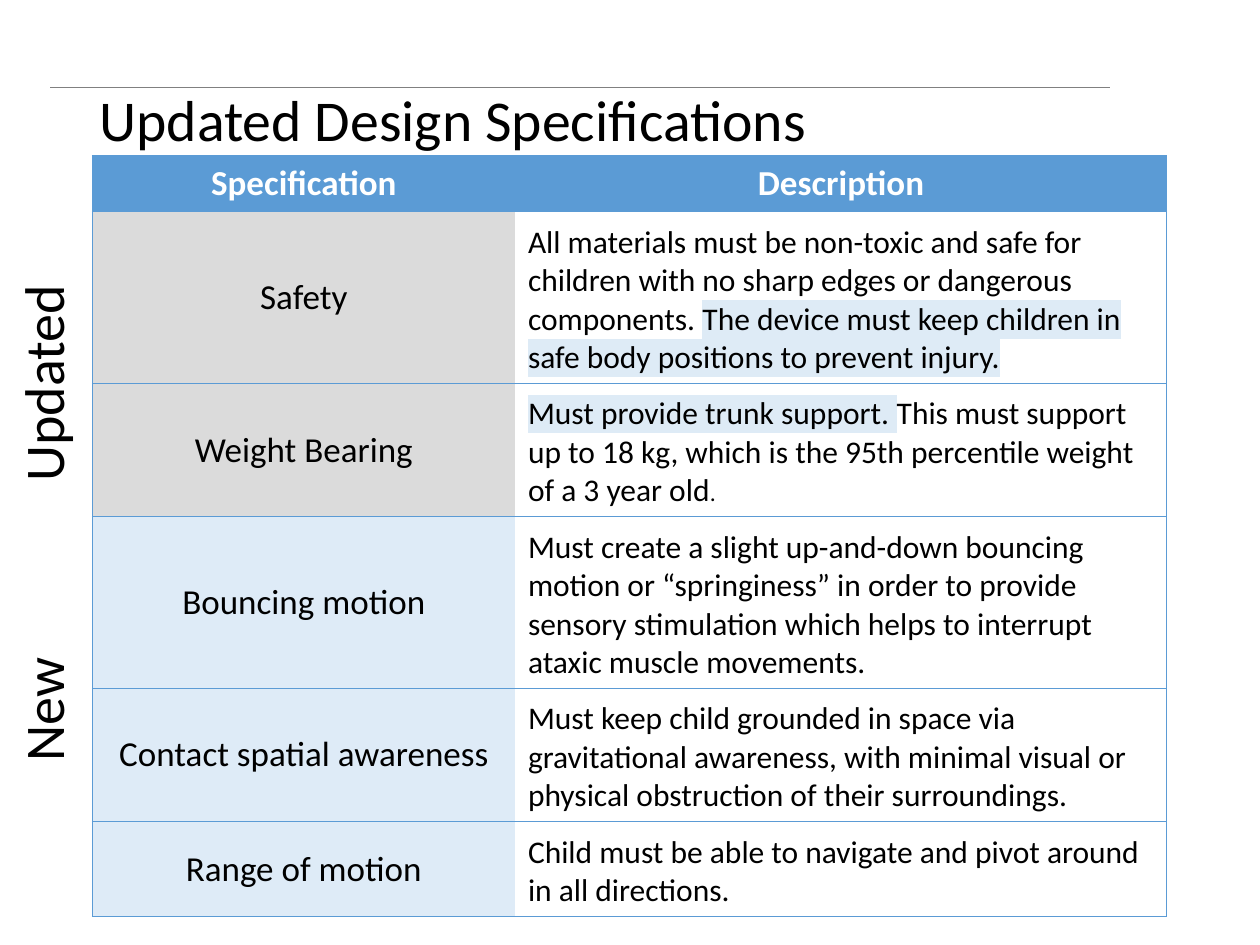
from lxml import etree
from pptx import Presentation
from pptx.dml.color import RGBColor
from pptx.enum.shapes import MSO_CONNECTOR
from pptx.enum.text import MSO_ANCHOR, MSO_AUTO_SIZE, PP_ALIGN
from pptx.oxml.ns import qn
from pptx.util import Cm, Pt

STRAIGHT = MSO_CONNECTOR.STRAIGHT
TOP, MIDDLE = MSO_ANCHOR.TOP, MSO_ANCHOR.MIDDLE
LEFT, CENTER = PP_ALIGN.LEFT, PP_ALIGN.CENTER
GROW = MSO_AUTO_SIZE.SHAPE_TO_FIT_TEXT

BLACK = RGBColor(0x00, 0x00, 0x00)
WHITE = RGBColor(0xFF, 0xFF, 0xFF)
BLUE = RGBColor(0x5B, 0x9B, 0xD5)
PALE_BLUE = RGBColor(0xDE, 0xEB, 0xF7)
HIGHLIGHT = RGBColor(0xDE, 0xEB, 0xF6)
LIGHT_GRAY = RGBColor(0xDB, 0xDB, 0xDB)
RULE_GRAY = RGBColor(0x80, 0x80, 0x80)

TITLE_FORMAT = {"name": "Calibri", "size": Pt(33), "bold": False}
SIDE_FORMAT = {"name": "Calibri", "size": Pt(32)}
HEADER_FORMAT = {"name": "Calibri", "size": Pt(20), "bold": True}
NAME_FORMAT = {"name": "Calibri", "size": Pt(20), "bold": False}
BODY_FORMAT = {"name": "Calibri", "size": Pt(18), "bold": False}
STOP_FORMAT = {**BODY_FORMAT, "size": Pt(13.5)}

# Each row: height in cm, name, name fill, description spans (text, marked, format)
SPECIFICATIONS = [
    (3.45, "Safety", LIGHT_GRAY, [
        ("All materials must be non-toxic and safe for children with no sharp "
         "edges or dangerous components. ", False, BODY_FORMAT),
        ("The device must keep children in safe body positions to prevent "
         "injury.", True, BODY_FORMAT)]),
    (2.68, "Weight Bearing", LIGHT_GRAY, [
        ("Must provide trunk support. ", True, BODY_FORMAT),
        ("This must support up to 18 kg, which is the 95th percentile weight "
         "of a 3 year old", False, BODY_FORMAT),
        (".", False, STOP_FORMAT)]),
    (3.45, "Bouncing motion", PALE_BLUE, [
        ("Must create a slight up-and-down bouncing motion or “springiness” in "
         "order to provide sensory stimulation which helps to interrupt ataxic "
         "muscle movements.", False, BODY_FORMAT)]),
    (2.68, "Contact spatial awareness", PALE_BLUE, [
        ("Must keep child grounded in space via gravitational awareness, with "
         "minimal visual or physical obstruction of their surroundings.",
         False, BODY_FORMAT)]),
    (1.89, "Range of motion", PALE_BLUE, [
        ("Child must be able to navigate and pivot around in all directions.",
         False, BODY_FORMAT)]),
]
HEADER_HEIGHT = 1.13
COLUMN_WIDTHS = (8.53, 13.13)


def add_span(para, text, values, color=BLACK, marked=False):
    span = para.add_run()
    span.text = text
    for key, value in values.items():
        setattr(span.font, key, value)
    span.font.color.rgb = color
    if marked:
        highlight = etree.Element(qn("a:highlight"))
        etree.SubElement(highlight, qn("a:srgbClr"), val=str(HIGHLIGHT))
        span.font._element.find(qn("a:solidFill")).addnext(highlight)


def set_borders(cell, sides):
    """Draw the named sides in blue and leave the others empty."""
    properties = cell._tc.get_or_add_tcPr()
    for side in "LRTB":
        line = etree.SubElement(properties, qn(f"a:ln{side}"), w=str(Pt(0.5)))
        if side in sides:
            fill = etree.SubElement(line, qn("a:solidFill"))
            etree.SubElement(fill, qn("a:srgbClr"), val=str(BLUE))
        else:
            etree.SubElement(line, qn("a:noFill"))


def fill_cell(cell, spans, fill, sides, color=BLACK, align=CENTER, anchor=MIDDLE):
    set_borders(cell, sides)
    cell.fill.solid()
    cell.fill.fore_color.rgb = fill
    cell.vertical_anchor = anchor
    para = cell.text_frame.paragraphs[0]
    para.alignment = align
    for text, marked, values in spans:
        add_span(para, text, values, color, marked)


def add_heading(page, left, top, width, height):
    # Thin rule across the top of the page
    rule = page.shapes.add_connector(
        STRAIGHT, left - Cm(0.74), top + Cm(1.11), left + Cm(20.63), top + Cm(1.11))
    rule.line.color.rgb = RULE_GRAY
    rule.line.width = Pt(0.25)
    etree.SubElement(rule._element.spPr, qn("a:effectLst"))

    title = page.shapes.title
    title.left, title.top, title.width, title.height = left, top, width, height
    title.text_frame.vertical_anchor = MIDDLE
    para = title.text_frame.paragraphs[0]
    para.alignment = LEFT
    para.line_spacing = 0.9
    add_span(para, "Updated Design Specifications", TITLE_FORMAT)


def add_specifications(page, left, top, width, height):
    frame = page.shapes.add_table(
        len(SPECIFICATIONS) + 1, len(COLUMN_WIDTHS), left, top, width, height)
    table = frame.table
    table.horz_banding = False
    for column, column_width in zip(table.columns, COLUMN_WIDTHS):
        column.width = Cm(column_width)

    # Header row
    table.rows[0].height = Cm(HEADER_HEIGHT)
    for index, (text, sides) in enumerate((("Specification", "LTB"), ("Description", "RTB"))):
        fill_cell(table.cell(0, index), [(text, False, HEADER_FORMAT)], BLUE,
                  sides, color=WHITE, anchor=TOP)

    # One row for each specification
    for index, (row_height, name, fill, spans) in enumerate(SPECIFICATIONS, 1):
        table.rows[index].height = Cm(row_height)
        fill_cell(table.cell(index, 0), [(name, False, NAME_FORMAT)], fill, "LTB")
        description = table.cell(index, 1)
        description.margin_top = Cm(0.23)
        description.margin_bottom = Cm(0.13)
        fill_cell(description, spans, WHITE, "RTB", align=LEFT, anchor=TOP)


def add_side_label(page, text, left, top, width, height):
    box = page.shapes.add_textbox(left, top, width, height)
    box.text_frame.word_wrap = True
    box.text_frame.auto_size = GROW
    box.text_frame._txBody.bodyPr.set("vert", "vert270")
    add_span(box.text_frame.paragraphs[0], text, SIDE_FORMAT)


def main():
    deck = Presentation()
    deck.slide_width, deck.slide_height = Cm(25.4), Cm(19.05)
    page = deck.slides.add_slide(deck.slide_layouts[5])
    add_heading(page, Cm(1.75), Cm(0.64), Cm(21.9), Cm(3.68))
    table_height = HEADER_HEIGHT + sum(row[0] for row in SPECIFICATIONS)
    add_specifications(page, Cm(1.86), Cm(3.14), Cm(sum(COLUMN_WIDTHS)), Cm(table_height))
    label_height = Cm(5.64)
    for index, text in enumerate(("Updated", "New")):
        add_side_label(page, text, Cm(0.05), Cm(4.32) + index * label_height,
                       Cm(1.88), label_height)
    deck.save("out.pptx")


if __name__ == "__main__":
    main()
